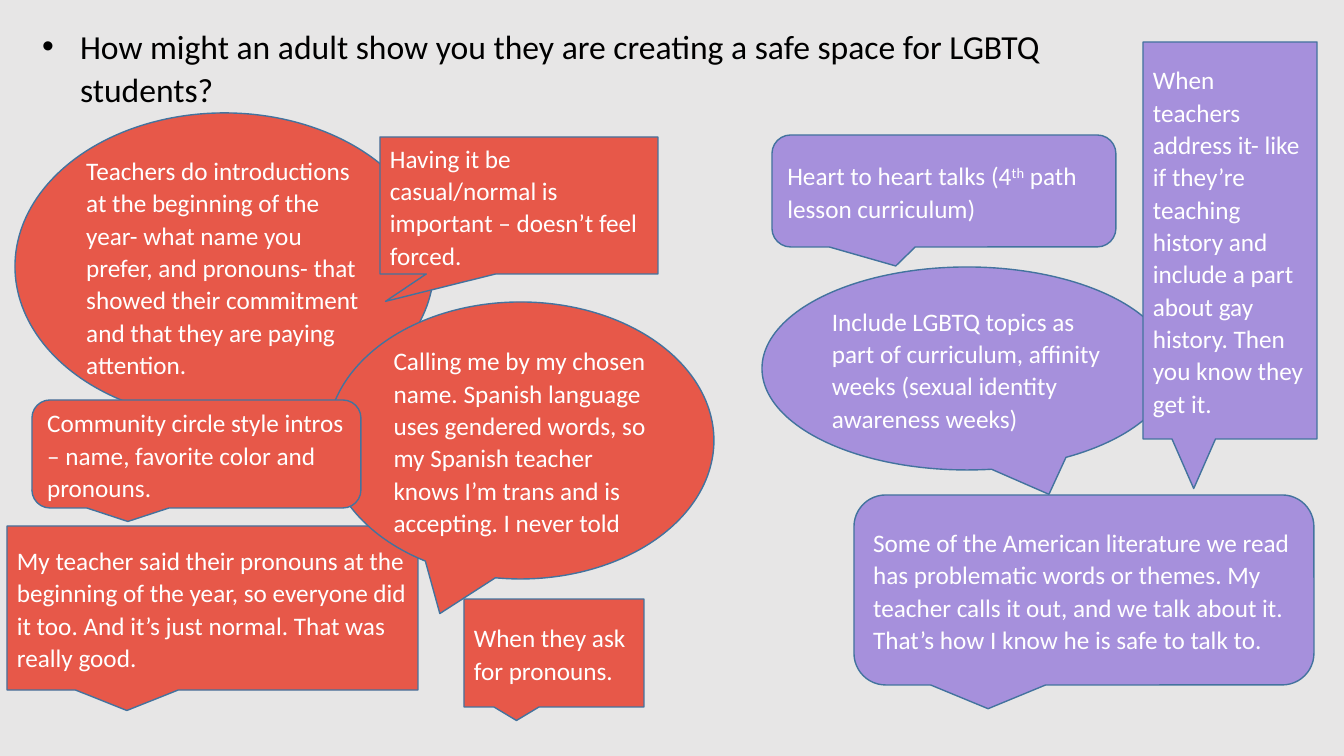
from lxml.etree import SubElement
from pptx import Presentation
from pptx.dml.color import RGBColor
from pptx.enum.shapes import MSO_SHAPE
from pptx.enum.text import MSO_ANCHOR, MSO_AUTO_SIZE, PP_ALIGN
from pptx.oxml.ns import qn
from pptx.util import Pt

W, H = 1344, 756
SCALE = 12192000 / W
COLORS = {"back": "E7E6E6", "ink": "000000", "white": "FFFFFF",
          "line": "43739E", "red": "E75849", "purple": "A690DC"}
OVAL = MSO_SHAPE.OVAL_CALLOUT
ROUND = MSO_SHAPE.ROUNDED_RECTANGULAR_CALLOUT
RECT = MSO_SHAPE.RECTANGULAR_CALLOUT

CALLOUTS = [
    (OVAL, "purple", (762, 267, 410, 203), (0.2, 0.62),
     "Include LGBTQ topics as part of curriculum, affinity weeks (sexual identity awareness weeks)"),
    (OVAL, "red", (15, 113, 419, 307), (0.32, 0.48),
     "Teachers do introductions at the beginning of the year- what name you prefer, "
     "and pronouns- that showed their commitment and that they are paying attention."),
    (ROUND, "purple", (772, 135, 344, 112), (-0.14, 0.67),
     "Heart to heart talks (4^th^ path lesson curriculum)"),
    (ROUND, "purple", (854, 495, 460, 190), (),
     "Some of the American literature we read has problematic words or themes. "
     "My teacher calls it out, and we talk about it. That’s how I know he is safe to talk to."),
    (RECT, "red", (380, 137, 278, 137), (-0.48, 0.7),
     "Having it be casual/normal is important – doesn’t feel forced."),
    (RECT, "red", (7, 526, 411, 164), (),
     "My teacher said their pronouns at the beginning of the year, so everyone did it too. "
     "And it’s just normal. That was really good."),
    (RECT, "red", (464, 599, 180, 108), (), "When they ask for pronouns."),
    (RECT, "purple", (1143, 42, 174, 397), (),
     "When teachers address it- like if they’re teaching history and include a part "
     "about gay history. Then you know they get it."),
    (OVAL, "red", (327, 302, 387, 277), (),
     "Calling me by my chosen name. Spanish language uses gendered words, "
     "so my Spanish teacher knows I’m trans and is accepting. I never told"),
    (ROUND, "red", (32, 400, 329, 108), (),
     "Community circle style intros – name, favorite color and pronouns."),
]


def px(n):
    return round(n * SCALE)


def rgb(name):
    return RGBColor.from_string(COLORS[name])


def write(tf, text, size=18, color="white", anchor=MSO_ANCHOR.MIDDLE, bullet=0):
    """Write one paragraph; text between ^ marks is superscript."""
    tf.word_wrap = True
    tf.auto_size = MSO_AUTO_SIZE.NONE
    tf.vertical_anchor = anchor
    p = tf.paragraphs[0]
    p.alignment = PP_ALIGN.LEFT
    p.line_spacing = 1.07
    if bullet:
        pPr = p._p.get_or_add_pPr()
        pPr.set("marL", str(px(bullet)))
        pPr.set("indent", str(-px(bullet)))
        SubElement(pPr, qn("a:buFont")).set("typeface", "Arial")
        SubElement(pPr, qn("a:buChar")).set("char", "•")
    for i, part in enumerate(text.split("^")):
        r = p.add_run()
        r.text = part
        r.font.name = "Calibri"
        r.font.size = Pt(size)
        r.font.color.rgb = rgb(color)
        if i % 2:
            r._r.get_or_add_rPr().set("baseline", "30000")


class Deck:
    """Hold the presentation, its style and the current slide."""

    def __init__(self):
        self.prs = Presentation()
        self.prs.slide_width, self.prs.slide_height = px(W), px(H)
        self.s = self.prs.slides.add_slide(self.prs.slide_layouts[5])
        fill = self.s.background.fill
        fill.solid()
        fill.fore_color.rgb = rgb("back")

    def title(self, box, text):
        sp = self.s.shapes.title
        sp.left, sp.top, sp.width, sp.height = map(px, box)
        write(sp.text_frame, text, size=24, color="ink", anchor=MSO_ANCHOR.TOP, bullet=38)

    def callout(self, kind, color, box, tip, text):
        sp = self.s.shapes.add_shape(kind, *map(px, box))
        sp.shadow.inherit = False
        sp.fill.solid()
        sp.fill.fore_color.rgb = rgb(color)
        sp.line.color.rgb = rgb("line")
        sp.line.width = Pt(1)
        for i, value in enumerate(tip):
            sp.adjustments[i] = value
        write(sp.text_frame, text)


def main():
    deck = Deck()
    deck.title((32, 18, 1134, 96),
               "How might an adult show you they are creating a safe space for LGBTQ students?")
    for callout in CALLOUTS:
        deck.callout(*callout)
    deck.prs.save("out.pptx")


if __name__ == "__main__":
    main()
